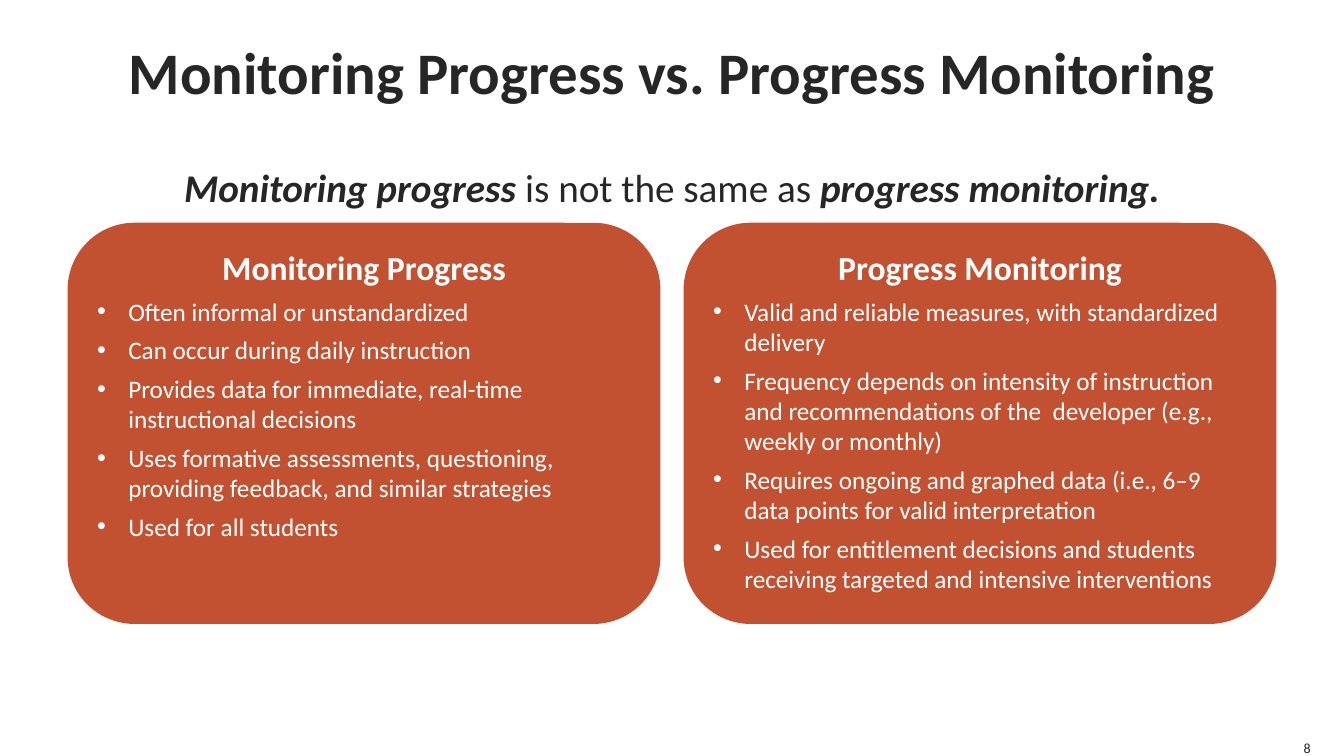
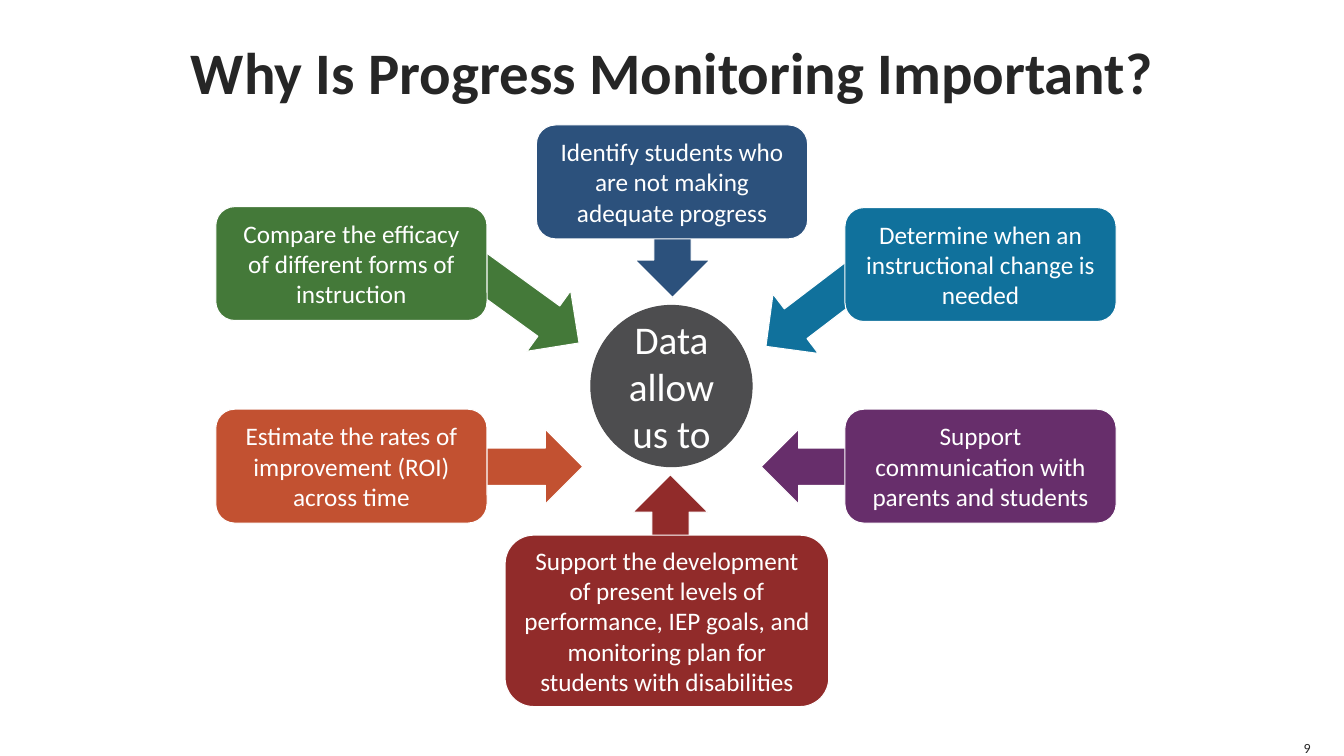
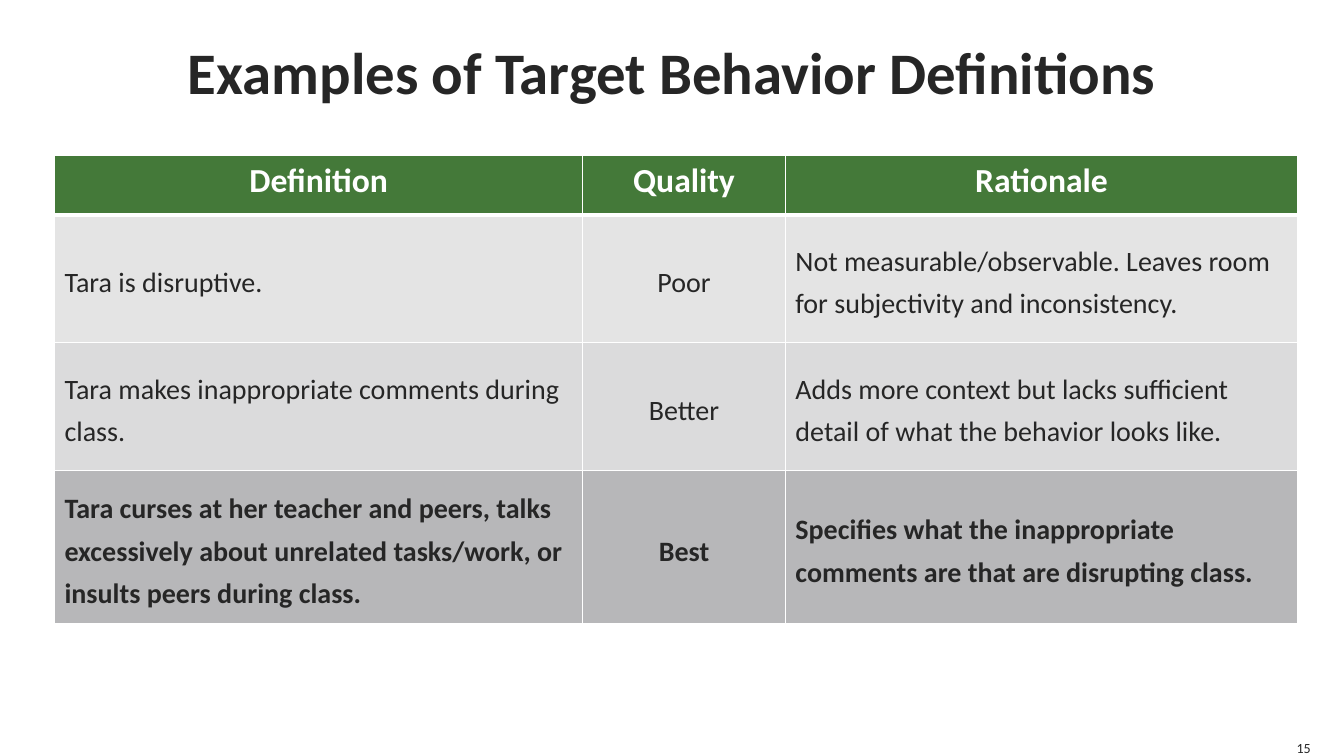
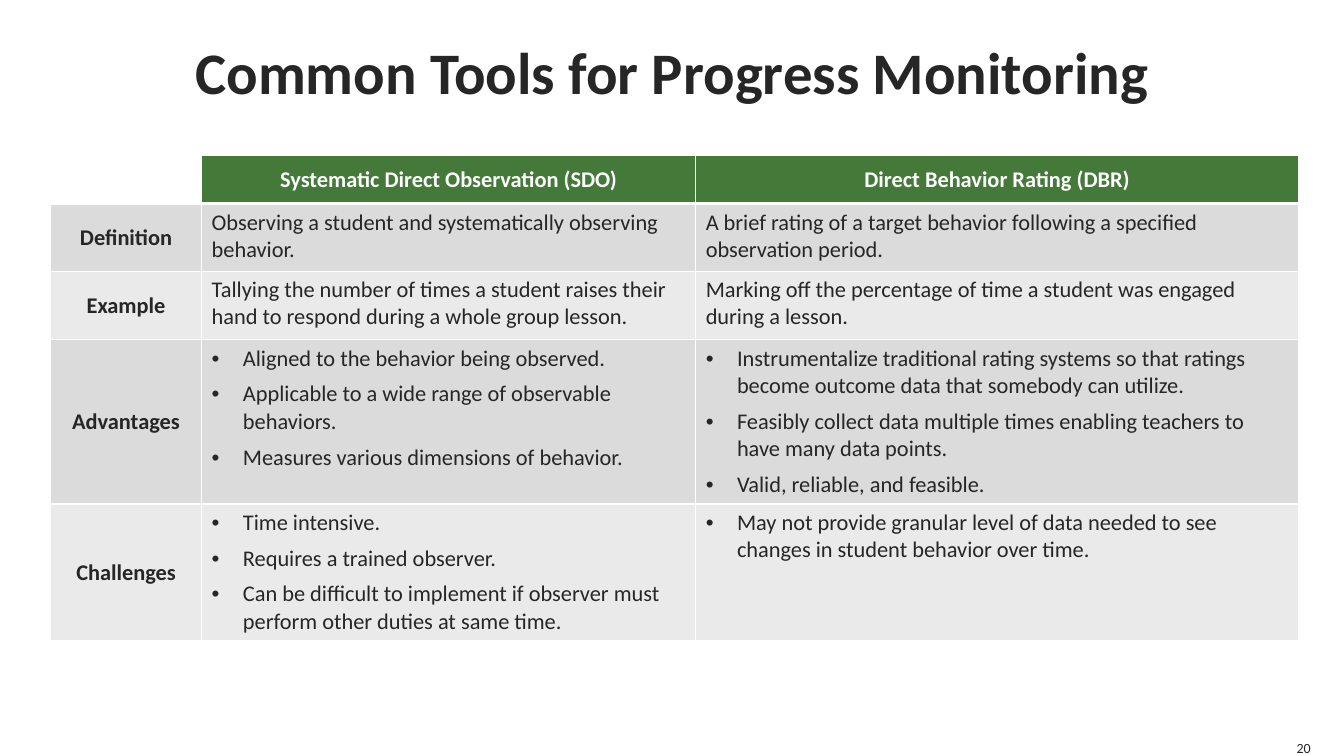
"""Build four slides on progress monitoring."""
from lxml.etree import SubElement as Sub
from pptx import Presentation
from pptx.dml.color import RGBColor
from pptx.enum.shapes import MSO_SHAPE as Shape
from pptx.enum.text import MSO_ANCHOR as Anchor, MSO_AUTO_SIZE as Fit, PP_ALIGN as Align
from pptx.oxml.ns import qn
from pptx.util import Inches, Pt

INK = RGBColor(0x26, 0x26, 0x26)
WHITE = RGBColor(0xFF, 0xFF, 0xFF)
RUST = RGBColor(0xC2, 0x51, 0x31)
GREEN = RGBColor(0x44, 0x79, 0x39)
NAVY = RGBColor(0x2C, 0x51, 0x7C)
BLUE = RGBColor(0x10, 0x71, 0x9C)
PLUM = RGBColor(0x67, 0x2E, 0x6B)
RED = RGBColor(0x91, 0x2B, 0x2A)
SLATE = RGBColor(0x4D, 0x4D, 0x4F)
PALE = RGBColor(0xEA, 0xEA, 0xEA)
LIGHT = RGBColor(0xE4, 0xE4, 0xE4)
GRAY = RGBColor(0xDB, 0xDB, 0xDC)
DARK = RGBColor(0xB7, 0xB7, 0xB9)


def style(par, size, color, bold=False, align=Align.LEFT, bullet=False):
    """Format a paragraph and its runs."""
    par.alignment = align
    if bullet:
        props = par._p.get_or_add_pPr()
        props.set("marL", str(Inches(0.31)))
        props.set("indent", str(-Inches(0.31)))
        Sub(props, qn("a:buFont")).set("typeface", "Arial")
        Sub(props, qn("a:buChar")).set("char", "•")
    for run in par.runs:
        run.font.name = "Calibri"
        run.font.size = Pt(size)
        run.font.bold = bold
        run.font.color.rgb = color


def grid(slide, left, widths, heights, rows, fills):
    """Add a table with white rules and filled rows."""
    frame = slide.shapes.add_table(len(rows), len(widths), Inches(left), Inches(1.54),
                                   Inches(sum(widths)), Inches(sum(heights)))
    table = frame.table
    table.horz_banding = False
    for col, width in zip(table.columns, widths):
        col.width = Inches(width)
    for r, row in enumerate(rows):
        table.rows[r].height = Inches(heights[r])
        for c, text in enumerate(row):
            cell = table.cell(r, c)
            cell.text_frame.text = text
            props = cell._tc.get_or_add_tcPr()
            for side in ("L", "R", "T", "B"):
                thick = (r, side) in ((0, "B"), (1, "T"))
                line = Sub(props, qn("a:ln" + side), w=str(Pt(3 if thick else 1)))
                Sub(Sub(line, qn("a:solidFill")), qn("a:srgbClr"), val=str(WHITE))
            if text:
                cell.fill.solid()
                cell.fill.fore_color.rgb = fills[r]
            else:
                cell.fill.background()
    return table


deck = Presentation()
deck.slide_width = Inches(13.33)
deck.slide_height = Inches(7.5)

pages = [
    (1, "Monitoring Progress vs. Progress Monitoring", "8"),
    (5, "Why Is Progress Monitoring Important?", "9"),
    (5, "Examples of Target Behavior Definitions", "15"),
    (5, "Common Tools for Progress Monitoring", "20"),
]
for layout, name, number in pages:
    slide = deck.slides.add_slide(deck.slide_layouts[layout])
    title = slide.shapes.title
    title.left, title.top = Inches(0.5), Inches(0)
    title.width, title.height = Inches(12.33), Inches(1.4)
    foot = slide.shapes.add_textbox(Inches(12.83), Inches(7.33), Inches(0.17), Inches(0.17))
    for box, text, size, align, anchor in (
            (title, name, 42, Align.CENTER, Anchor.MIDDLE),
            (foot, number, 10, Align.RIGHT, Anchor.BOTTOM)):
        frame = box.text_frame
        frame.text = text
        frame.margin_left = frame.margin_right = frame.margin_top = frame.margin_bottom = 0
        frame.vertical_anchor = anchor
        frame.word_wrap = box is title
        frame.auto_size = Fit.NONE if box is title else Fit.SHAPE_TO_FIT_TEXT
        style(frame.paragraphs[0], size, INK, box is title, align)

versus, why, target, tools = deck.slides

body = versus.placeholders[1]
body.left, body.top = Inches(0.5), Inches(1.5)
body.width, body.height = Inches(12.33), Inches(0.73)
frame = body.text_frame
frame.margin_left = frame.margin_right = frame.margin_top = frame.margin_bottom = 0
frame.auto_size = Fit.NONE
par = frame.paragraphs[0]
for text in ("Monitoring progress ", "is not the same as ", "progress monitoring."):
    par.add_run().text = text
props = par._p.get_or_add_pPr()
props.set("marL", "0")
props.set("indent", "0")
Sub(props, qn("a:buNone"))
par.line_spacing = 1.25
par.space_before = Pt(0)
style(par, 28, INK, align=Align.CENTER)
for run in par.runs[::2]:
    run.font.bold = run.font.italic = True

cards = [
    ["Monitoring Progress",
     "Often informal or unstandardized",
     "Can occur during daily instruction",
     "Provides data for immediate, real-time instructional decisions",
     "Uses formative assessments, questioning, providing feedback, and similar strategies",
     "Used for all students"],
    ["Progress Monitoring",
     "Valid and reliable measures, with standardized delivery",
     "Frequency depends on intensity of instruction and recommendations of the  developer "
     "(e.g., weekly or monthly)",
     "Requires ongoing and graphed data (i.e., 6–9 data points for valid interpretation",
     "Used for entitlement decisions and students receiving targeted and intensive interventions"],
]
for i, lines in enumerate(cards):
    card = versus.shapes.add_shape(Shape.ROUNDED_RECTANGLE, Inches(0.67 + 6.11 * i), Inches(2.21),
                                   Inches(5.88), Inches(3.98))
    card.shadow.inherit = False
    card.fill.solid()
    card.fill.fore_color.rgb = RUST
    card.line.fill.background()
    frame = card.text_frame
    frame.text = "\n".join(lines)
    frame.vertical_anchor = Anchor.TOP
    head, *items = frame.paragraphs
    style(head, 24, WHITE, True, Align.CENTER)
    for par in items:
        par.space_before = Pt(6)
        style(par, 18, WHITE, bullet=True)

ARROW, ROUND = Shape.RIGHT_ARROW, Shape.ROUNDED_RECTANGLE
parts = [(Shape.OVAL, SLATE, SLATE, 5.86, 3.03, 1.6, 1.6, 0, 28, "Data allow us to")]
reasons = [
    (NAVY, 6, 1.91, 90, 5.32, 1.24, 2.69, 1.13,
     "Identify students who are not making adequate progress"),
    (BLUE, 7.46, 2.66, 142.7, 8.38, 2.06, 2.69, 1.13,
     "Determine when an instructional change is needed"),
    (PLUM, 7.55, 4.26, 180, 8.38, 4.06, 2.69, 1.13,
     "Support communication with parents and students"),
    (RED, 5.98, 5.01, 270, 5.01, 5.31, 3.21, 1.7,
     "Support the development of present levels of performance, IEP goals, and monitoring plan "
     "for students with disabilities"),
    (RUST, 4.44, 4.26, 0, 2.14, 4.06, 2.69, 1.13,
     "Estimate the rates of improvement (ROI) across time"),
    (GREEN, 4.53, 2.64, 35.9, 2.14, 2.05, 2.69, 1.13,
     "Compare the efficacy of different forms of instruction"),
]
for color, left, top, turn, x, y, width, height, text in reasons:
    parts.append((ARROW, color, WHITE, left, top, 1.34, 0.74, turn, 18, ""))
    parts.append((ROUND, color, WHITE, x, y, width, height, 0, 18, text))
for kind, color, edge, x, y, width, height, turn, size, text in parts:
    part = why.shapes.add_shape(kind, Inches(x), Inches(y), Inches(width), Inches(height))
    part.rotation = turn
    part.shadow.inherit = False
    part.fill.solid()
    part.fill.fore_color.rgb = color
    part.line.color.rgb = edge
    part.line.width = Pt(0.75)
    if text:
        part.text_frame.text = text
        part.text_frame.vertical_anchor = Anchor.MIDDLE
        style(part.text_frame.paragraphs[0], size, WHITE, align=Align.CENTER)

rows = [
    ("Definition", "Quality", "Rationale"),
    ("Tara is disruptive.", "Poor",
     "Not measurable/observable. Leaves room for subjectivity and inconsistency."),
    ("Tara makes inappropriate comments during class.", "Better",
     "Adds more context but lacks sufficient detail of what the behavior looks like."),
    ("Tara curses at her teacher and peers, talks excessively about unrelated tasks/work, "
     "or insults peers during class.", "Best",
     "Specifies what the inappropriate comments are that are disrupting class."),
]
table = grid(target, 0.54, (5.24, 2.01, 5.08), (0.59, 1.27, 1.27, 1.52), rows,
             (GREEN, LIGHT, GRAY, DARK))
for r in range(4):
    for c in range(3):
        cell = table.cell(r, c)
        par = cell.text_frame.paragraphs[0]
        align = Align.CENTER if r == 0 or c == 1 else Align.LEFT
        if r == 0:
            style(par, 24, WHITE, True, align)
        else:
            cell.vertical_anchor = Anchor.MIDDLE
            par.line_spacing = 1.25
            style(par, 20, INK, r == 3, align)

rows = [
    ("", "Systematic Direct Observation (SDO)", "Direct Behavior Rating (DBR)"),
    ("Definition", "Observing a student and systematically observing behavior.",
     "A brief rating of a target behavior following a specified observation period."),
    ("Example",
     "Tallying the number of times a student raises their hand to respond during a whole "
     "group lesson.",
     "Marking off the percentage of time a student was engaged during a lesson."),
    ("Advantages",
     "Aligned to the behavior being observed.\n"
     "Applicable to a wide range of observable behaviors.\n"
     "Measures various dimensions of behavior.",
     "Instrumentalize traditional rating systems so that ratings become outcome data that "
     "somebody can utilize.\n"
     "Feasibly collect data multiple times enabling teachers to have many data points.\n"
     "Valid, reliable, and feasible."),
    ("Challenges",
     "Time intensive.\n"
     "Requires a trained observer.\n"
     "Can be difficult to implement if observer must perform other duties at same time.",
     "May not provide granular level of data needed to see changes in student behavior "
     "over time."),
]
table = grid(tools, 0.5, (1.5, 4.9, 5.98), (0.48, 0.67, 0.68, 1.63, 1.36), rows,
             (GREEN, GRAY, PALE, GRAY, PALE))
for r in range(5):
    for c in range(3):
        cell = table.cell(r, c)
        head = r == 0 or c == 0
        cell.vertical_anchor = Anchor.MIDDLE if head else Anchor.TOP
        for par in cell.text_frame.paragraphs:
            if r > 0:
                par.space_after = Pt(6)
            style(par, 16, INK if r else WHITE, head, Align.CENTER if head else Align.LEFT,
                  r > 2 and c > 0)

deck.save("out.pptx")
